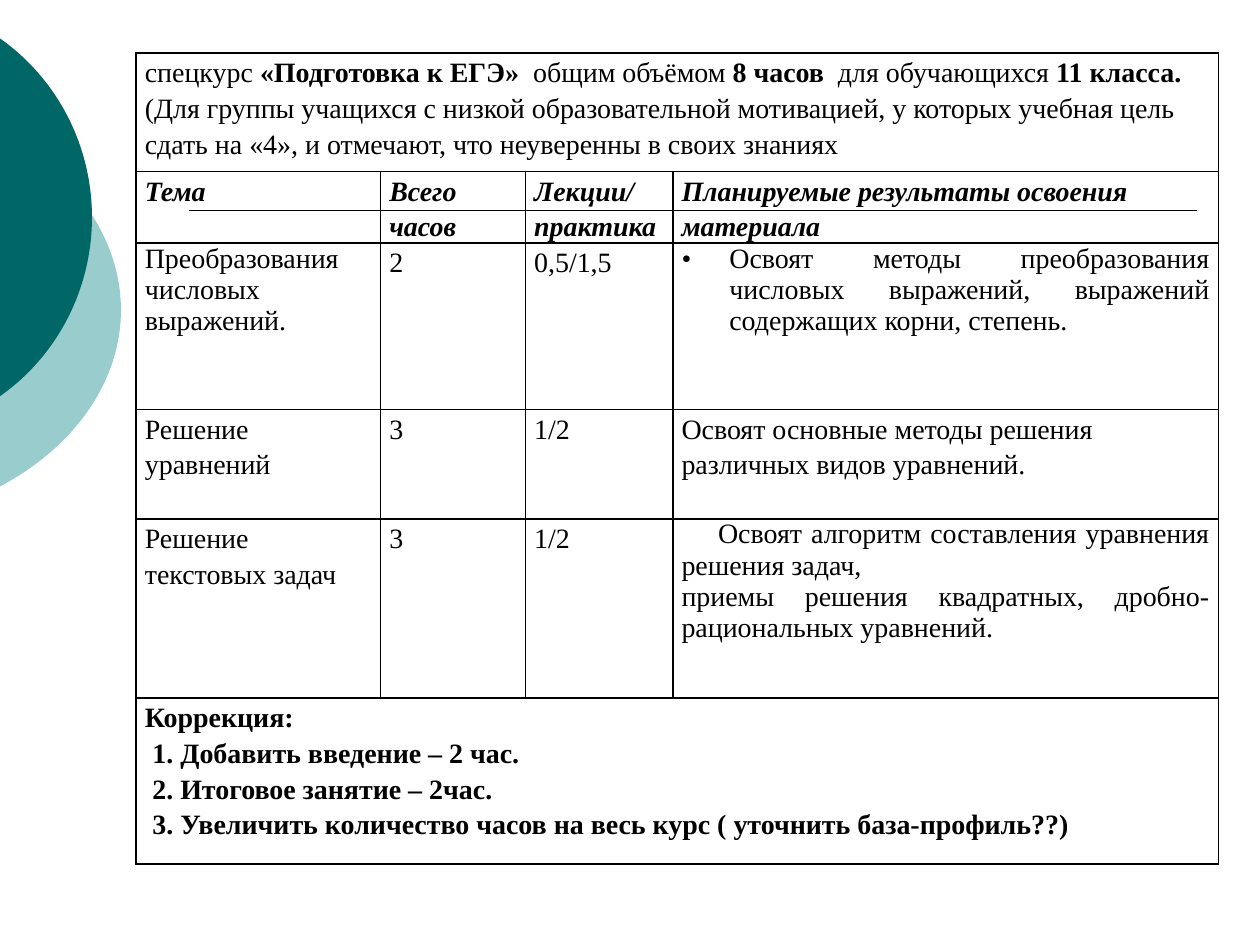
from dataclasses import dataclass

from lxml.etree import SubElement
from pptx import Presentation
from pptx.dml.color import RGBColor
from pptx.enum.shapes import MSO_CONNECTOR as Connector
from pptx.enum.shapes import MSO_SHAPE as Shape
from pptx.enum.text import PP_ALIGN as Align
from pptx.oxml.ns import qn
from pptx.util import Inches, Pt

COLORS = {"ink": "000000", "light": "99CCCC", "dark": "006666"}
FONT = "Times New Roman"
COLUMN_WIDTHS = (1.94, 1.15, 1.17, 4.33)
ROW_HEIGHTS = (0.94, 0.57, 1.32, 0.87, 1.42, 1.32)


@dataclass(frozen=True)
class Span:
    text: str
    bold: bool = False
    italic: bool = False


@dataclass(frozen=True)
class Line:
    spans: tuple[Span, ...]
    justified: bool = False
    margin: float = 0
    indent: float = 0
    bullet: str = ""


@dataclass(frozen=True)
class Disc:
    left: float
    top: float
    width: float
    height: float
    color: str


DISCS = (
    Disc(-3.54, 0.75, 4.5, 3.42, "light"),
    Disc(-2.65, 0, 3.38, 3.45, "dark"),
)


def plain(text: str, **options) -> Line:
    return Line((Span(text),), **options)


def heading(text: str) -> Line:
    return Line((Span(text, bold=True, italic=True),))


def bold(text: str, **options) -> Line:
    return Line((Span(text, bold=True),), **options)


INTRODUCTION = Line((
    Span("спецкурс "),
    Span("«Подготовка к ЕГЭ»", bold=True),
    Span("  общим объёмом "),
    Span("8 часов", bold=True),
    Span("  для обучающихся "),
    Span("11 класса.", bold=True),
    Span("  (Для группы учащихся с низкой образовательной мотивацией, у которых "
         "учебная цель сдать на «4», и отмечают, что неуверенны в своих знаниях"),
))
CORRECTIONS = [
    bold("Коррекция:"),
    bold("1. Добавить введение – 2 час.", margin=0.06),
    bold("2. Итоговое занятие – 2час.", margin=0.06),
    bold("3. Увеличить количество часов на весь курс ( уточнить база-профиль??)", margin=0.06),
]
TABLE_ROWS = [
    [[INTRODUCTION]],
    [[heading(title)] for title in (
        "Тема", "Всего часов", "Лекции/практика", "Планируемые результаты освоения материала")],
    [
        [plain("Преобразования числовых выражений.", justified=True)],
        [plain("2")],
        [plain("0,5/1,5")],
        [plain("Освоят методы преобразования числовых выражений, выражений "
               "содержащих корни, степень.",
               justified=True, margin=0.38, indent=-0.38, bullet="•")],
    ],
    [
        [plain("Решение уравнений")],
        [plain("3")],
        [plain("1/2")],
        [plain("Освоят основные методы решения различных видов уравнений.")],
    ],
    [
        [plain("Решение текстовых задач")],
        [plain("3")],
        [plain("1/2")],
        [plain("Освоят алгоритм составления уравнения решения задач,",
               justified=True, indent=0.29),
         plain("приемы решения квадратных, дробно- рациональных уравнений.", justified=True)],
    ],
    [CORRECTIONS],
]


def color(name: str) -> RGBColor:
    return RGBColor.from_string(COLORS[name])


def draw_disc(slide, disc: Disc) -> None:
    shape = slide.shapes.add_shape(
        Shape.OVAL, Inches(disc.left), Inches(disc.top), Inches(disc.width), Inches(disc.height))
    shape.shadow.inherit = False
    shape.fill.solid()
    shape.fill.fore_color.rgb = color(disc.color)
    shape.line.fill.background()


def draw_rule(slide) -> None:
    rule = slide.shapes.add_connector(
        Connector.STRAIGHT, Inches(1.5), Inches(1.67), Inches(9.5), Inches(1.67))
    rule.line.color.rgb = color("ink")
    rule.line.width = Pt(1)
    SubElement(rule._element.spPr, qn("a:effectLst"))


def write_line(paragraph, line: Line) -> None:
    if line.justified:
        paragraph.alignment = Align.JUSTIFY
    else:
        paragraph.line_spacing = 1.15
    properties = paragraph._p.get_or_add_pPr()
    properties.set("marL", str(Inches(line.margin)))
    properties.set("indent", str(Inches(line.indent)))
    if line.bullet:
        SubElement(properties, qn("a:buFont"), typeface=FONT)
        SubElement(properties, qn("a:buChar"), char=line.bullet)
    for span in line.spans:
        run = paragraph.add_run()
        run.text = span.text
        run.font.name = FONT
        run.font.size = Pt(16)
        run.font.bold = span.bold
        run.font.italic = span.italic
        run.font.color.rgb = color("ink")


def format_cell(cell) -> None:
    cell.margin_left = cell.margin_right = Inches(0.07)
    cell.margin_top = cell.margin_bottom = 0
    properties = cell._tc.get_or_add_tcPr()
    for side in ("lnL", "lnR", "lnT", "lnB"):
        border = SubElement(properties, qn(f"a:{side}"), w=str(Pt(1)))
        fill = SubElement(border, qn("a:solidFill"))
        SubElement(fill, qn("a:srgbClr"), val=COLORS["ink"])
    cell.fill.background()


def draw_table(slide) -> None:
    table = slide.shapes.add_table(
        len(ROW_HEIGHTS), len(COLUMN_WIDTHS), Inches(1.08), Inches(0.42),
        Inches(sum(COLUMN_WIDTHS)), Inches(sum(ROW_HEIGHTS))).table
    table.first_row = table.horz_banding = False
    for column, width in zip(table.columns, COLUMN_WIDTHS):
        column.width = Inches(width)
    for row, height in zip(table.rows, ROW_HEIGHTS):
        row.height = Inches(height)
    for cell in table.iter_cells():
        format_cell(cell)
    last_column = len(COLUMN_WIDTHS) - 1
    for row_index, contents in enumerate(TABLE_ROWS):
        if len(contents) == 1:
            table.cell(row_index, 0).merge(table.cell(row_index, last_column))
        for column_index, lines in enumerate(contents):
            frame = table.cell(row_index, column_index).text_frame
            for index, line in enumerate(lines):
                write_line(frame.add_paragraph() if index else frame.paragraphs[0], line)


def main() -> None:
    presentation = Presentation()
    presentation.slide_width = Inches(10)
    presentation.slide_height = Inches(7.5)
    slide = presentation.slides.add_slide(presentation.slide_layouts[6])
    for disc in DISCS:
        draw_disc(slide, disc)
    draw_rule(slide)
    draw_table(slide)
    presentation.save("out.pptx")


if __name__ == "__main__":
    main()
